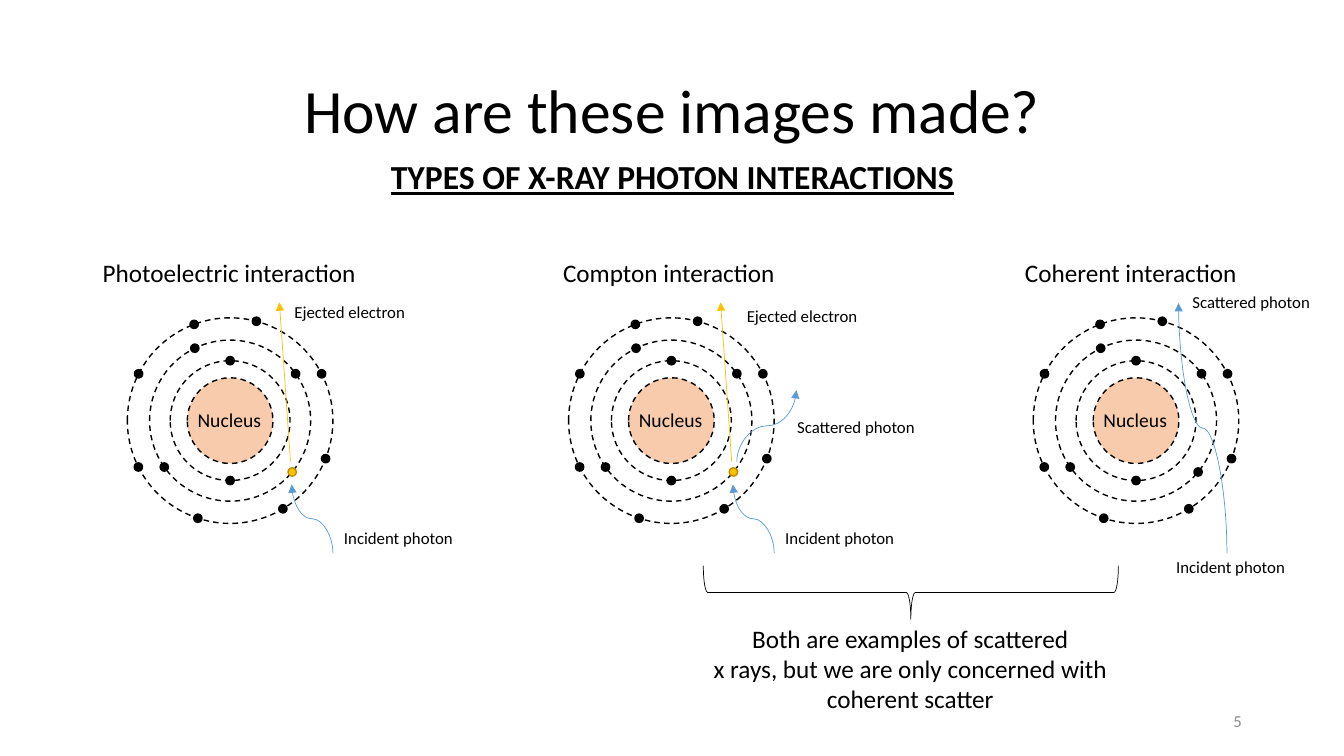
from math import cos, radians, sin

from lxml import etree
from pptx import Presentation
from pptx.dml.color import RGBColor
from pptx.enum.dml import MSO_LINE
from pptx.enum.shapes import MSO_CONNECTOR, MSO_SHAPE
from pptx.enum.text import MSO_ANCHOR, MSO_AUTO_SIZE, PP_ALIGN
from pptx.oxml.ns import qn
from pptx.util import Cm, Pt

LEFT, CENTER, RIGHT = PP_ALIGN.LEFT, PP_ALIGN.CENTER, PP_ALIGN.RIGHT
TOP, MIDDLE = MSO_ANCHOR.TOP, MSO_ANCHOR.MIDDLE
NO_FIT, GROW = MSO_AUTO_SIZE.NONE, MSO_AUTO_SIZE.SHAPE_TO_FIT_TEXT
STRAIGHT, CURVE = MSO_CONNECTOR.STRAIGHT, MSO_CONNECTOR.CURVE
OVAL, BRACE, DASH = MSO_SHAPE.OVAL, MSO_SHAPE.LEFT_BRACE, MSO_LINE.DASH

BLACK = RGBColor(0x00, 0x00, 0x00)
THEME = {
    "nucleus": RGBColor(0xF8, 0xCB, 0xAD),
    "photon": RGBColor(0x5B, 0x9B, 0xD5),
    "ejected": RGBColor(0xFF, 0xC0, 0x00),
    "ejected edge": RGBColor(0xBD, 0x8E, 0x00),
    "thin": Pt(0.5),
    "outline": Pt(1),
    "fonts": {
        "title": {"size": Pt(44)},
        "subtitle": {"size": Pt(24), "bold": True, "underline": True},
        "body": {"size": Pt(18)},
        "nucleus": {"size": Pt(14)},
        "label": {"size": Pt(12)},
        "number": {"size": Pt(12), "color": RGBColor(0x8C, 0x8C, 0x8C)},
    },
}


def write_text(box, lines, style, align=LEFT, anchor=TOP, wrap=True, fit=GROW, spacing=1.0):
    frame = box.text_frame
    frame.text = lines
    frame_format = {"word_wrap": wrap, "auto_size": fit, "vertical_anchor": anchor}
    for name, value in frame_format.items():
        setattr(frame, name, value)
    font_format = {"name": "Calibri", **THEME["fonts"][style]}
    color = font_format.pop("color", BLACK)
    for paragraph in frame.paragraphs:
        paragraph.alignment = align
        paragraph.line_spacing = spacing
        for name, value in font_format.items():
            setattr(paragraph.font, name, value)
        paragraph.font.color.rgb = color


def add_arrow(shapes, kind, start, end, color):
    (x1, y1), (x2, y2) = start, end
    if kind == CURVE:
        # A curve that leaves vertically is a horizontal one turned by 270 degrees
        middle_x, middle_y = (x1 + x2) / 2, (y1 + y2) / 2
        half_rise, half_run = (y1 - y2) / 2, (x2 - x1) / 2
        x1, x2 = middle_x - half_rise, middle_x + half_rise
        y1, y2 = middle_y - half_run, middle_y + half_run
    connector = shapes.add_connector(kind, Cm(x1), Cm(y1), Cm(x2), Cm(y2))
    connector.line.color.rgb = color
    connector.line.width = THEME["thin"]
    properties = connector._element.spPr
    if kind == CURVE:
        properties.find(qn("a:xfrm")).set("rot", str(270 * 60000))
    etree.SubElement(connector.line._get_or_add_ln(), qn("a:tailEnd"), type="triangle")
    etree.SubElement(properties, qn("a:effectLst"))


presentation = Presentation()
presentation.slide_width, presentation.slide_height = Cm(33.87), Cm(19.05)
slide = presentation.slides.add_slide(presentation.slide_layouts[5])

# Title and subtitle
title = slide.shapes.title
title.left, title.top, title.width, title.height = Cm(2.34), Cm(1.02), Cm(29.21), Cm(3.68)
write_text(title, "How are these images made?", "title", CENTER, MIDDLE, fit=NO_FIT, spacing=0.9)
subtitle = slide.shapes.add_textbox(Cm(2.34), Cm(2.67), Cm(29.21), Cm(3.68))
write_text(subtitle, "TYPES OF X-RAY PHOTON INTERACTIONS", "subtitle", CENTER, MIDDLE,
           fit=NO_FIT, spacing=0.9)

# Brace and remark under the two kinds of scatter
brace = slide.shapes.add_shape(BRACE, Cm(22.28), Cm(9.7), Cm(1.35), Cm(10.46))
brace.rotation = 270
brace.shadow.inherit = False
brace.fill.background()
brace.line.color.rgb = BLACK
brace.line.width = THEME["thin"]
remark = slide.shapes.add_textbox(Cm(17.63), Cm(15.57), Cm(10.62), Cm(2.57))
write_text(remark, "Both are examples of scattered\nx rays, but we are only concerned with\n"
           "coherent scatter", "body", CENTER, wrap=False)

# Atom model: ring diameters, and electron angles clockwise from the right
ATOM_Y = 10.6
NUCLEUS_SIZE, ELECTRON_SIZE = 2.16, 0.21
SHELLS = {
    3.02: [270, 90],
    4.06: [244, 39.6, 324.4, 144.8],
    5.18: [284.8, 108.3, 207.1, 21.7, 59.1, 153.2, 249.5, 332.9],
}
HIT_ELECTRON = (4.06, 39.6)

# Arrows and labels are placed relative to the centre of their atom
INCIDENT = (CURVE, (2.59, 3.34), (1.55, 1.61), "photon")
EJECTED = (STRAIGHT, (1.52, 1.03), (1.24, -2.98), "ejected")
LABEL_WIDTHS = {"Incident photon": 3.28, "Ejected electron": 3.33, "Scattered photon": 3.51}
INTERACTIONS = [
    {"heading": ("Photoelectric interaction", 2.34, 6.91), "x": 5.8, "ejects": True,
     "arrows": [INCIDENT, EJECTED],
     "labels": [("Incident photon", 2.62, 2.58), ("Ejected electron", 1.37, -3.11)]},
    {"heading": ("Compton interaction", 13.94, 5.97), "x": 17.02 - 0.1, "ejects": True,
     "arrows": [INCIDENT, EJECTED, (CURVE, (1.65, 1.03), (3.15, -0.77), "photon")],
     "labels": [("Incident photon", 2.62, 2.58), ("Ejected electron", 1.65, -3.01),
                ("Scattered photon", 2.92, -0.22)]},
    {"heading": ("Coherent interaction", 25.58, 5.97), "x": 28.63, "ejects": False,
     "arrows": [(CURVE, (2.29, 3.34), (1.07, -2.96), "photon")],
     "labels": [("Incident photon", 0.76, 3.31), ("Scattered photon", 1.17, -3.37)]},
]

for interaction in INTERACTIONS:
    atom_x = interaction["x"]
    shapes = slide.shapes.add_group_shape().shapes
    heading, left, width = interaction["heading"]
    box = shapes.add_textbox(Cm(left), Cm(6.35), Cm(width), Cm(1.02))
    write_text(box, heading, "body")

    # Nucleus, rings and electrons: offset, diameter, fill, outline, dashed
    circles = [(0, 0, NUCLEUS_SIZE, THEME["nucleus"], BLACK, True)]
    circles += [(0, 0, ring, None, BLACK, True) for ring in SHELLS]
    for ring, angles in SHELLS.items():
        for angle in angles:
            hit = interaction["ejects"] and (ring, angle) == HIT_ELECTRON
            fill, edge = (THEME["ejected"], THEME["ejected edge"]) if hit else (BLACK, BLACK)
            dx, dy = ring / 2 * cos(radians(angle)), ring / 2 * sin(radians(angle))
            circles.append((dx, dy, ELECTRON_SIZE, fill, edge, False))
    for dx, dy, size, fill, edge, dashed in circles:
        circle = shapes.add_shape(OVAL, Cm(atom_x + dx - size / 2), Cm(ATOM_Y + dy - size / 2),
                                  Cm(size), Cm(size))
        circle.shadow.inherit = False
        if fill is None:
            circle.fill.background()
        else:
            circle.fill.solid()
            circle.fill.fore_color.rgb = fill
        circle.line.color.rgb = edge
        circle.line.width = THEME["outline"]
        if dashed:
            circle.line.dash_style = DASH
    box = shapes.add_textbox(Cm(atom_x - 1.07), Cm(ATOM_Y - 0.44), Cm(2.13), Cm(0.86))
    write_text(box, "Nucleus", "nucleus")

    # Arrows and their labels
    for kind, (x1, y1), (x2, y2), color in interaction["arrows"]:
        add_arrow(shapes, kind, (atom_x + x1, ATOM_Y + y1), (atom_x + x2, ATOM_Y + y2),
                  THEME[color])
    for label, dx, dy in interaction["labels"]:
        box = shapes.add_textbox(Cm(atom_x + dx), Cm(ATOM_Y + dy),
                                 Cm(LABEL_WIDTHS[label]), Cm(0.77))
        write_text(box, label, "label", wrap=False)

# Slide number
number = slide.shapes.add_textbox(Cm(23.93), Cm(17.65), Cm(7.62), Cm(1.02))
write_text(number, "5", "number", RIGHT, MIDDLE, fit=NO_FIT)

presentation.save("out.pptx")
